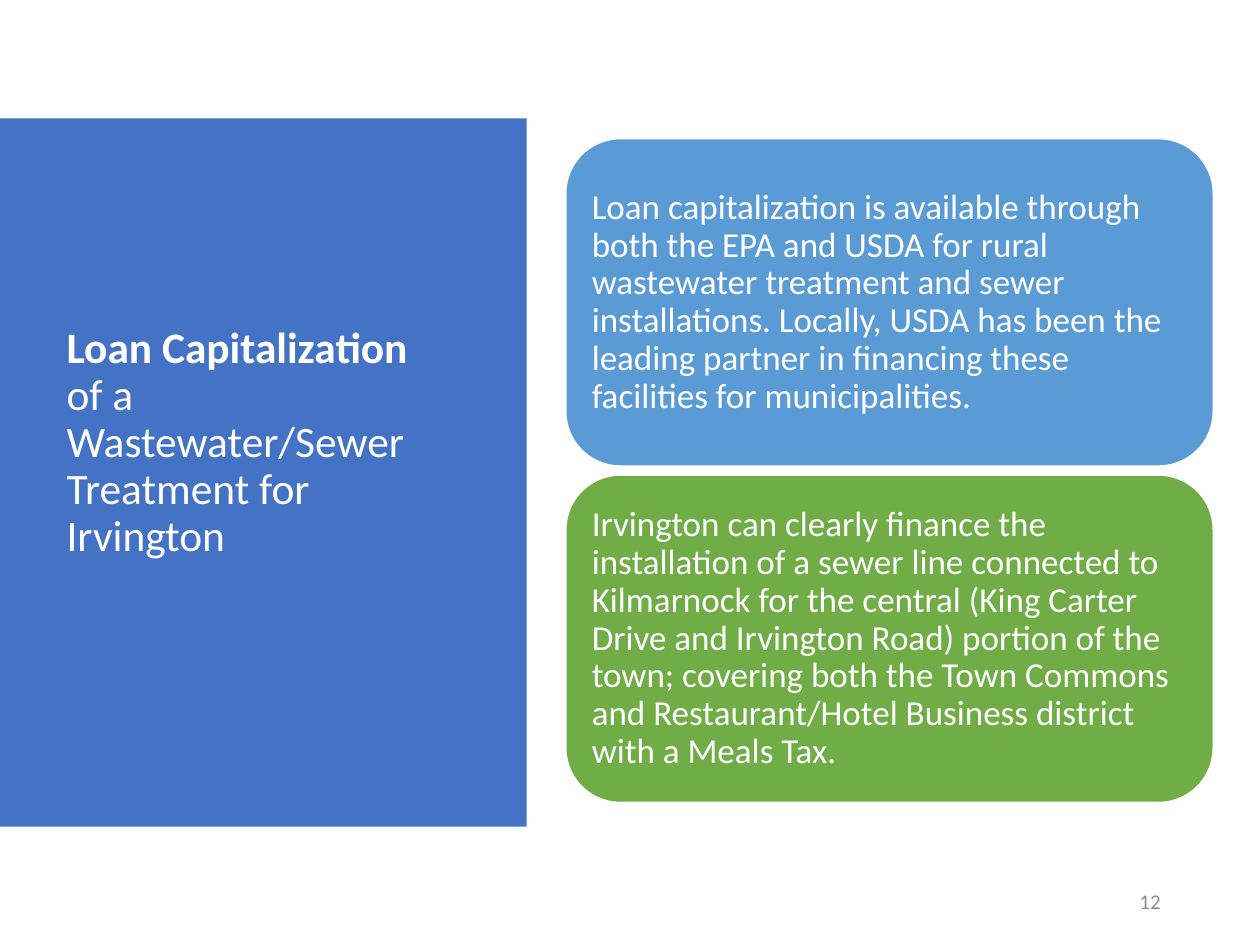
"""Build the loan capitalization slide with a title panel and two cards."""
from pptx import Presentation
from pptx.dml.color import RGBColor
from pptx.enum.shapes import MSO_SHAPE
from pptx.enum.text import MSO_ANCHOR, PP_ALIGN
from pptx.util import Inches, Pt

RECT, ROUNDED = MSO_SHAPE.RECTANGLE, MSO_SHAPE.ROUNDED_RECTANGLE
MIDDLE = MSO_ANCHOR.MIDDLE
LEFT, RIGHT = PP_ALIGN.LEFT, PP_ALIGN.RIGHT
WHITE = RGBColor(0xFF, 0xFF, 0xFF)
BLUE = RGBColor(0x44, 0x72, 0xC4)
LIGHT_BLUE = RGBColor(0x5B, 0x9B, 0xD5)
GREEN = RGBColor(0x70, 0xAD, 0x47)
GRAY = RGBColor(0x8C, 0x8C, 0x8C)

CARDS = [
    (LIGHT_BLUE, "Loan capitalization is available through both the EPA and USDA for rural "
     "wastewater treatment and sewer installations. Locally, USDA has been the leading "
     "partner in financing these facilities for municipalities."),
    (GREEN, "Irvington can clearly finance the installation of a sewer line connected to "
     "Kilmarnock for the central (King Carter Drive and Irvington Road) portion of the town; "
     "covering both the Town Commons and Restaurant/Hotel Business district with a Meals Tax."),
]


def add_block(shapes, kind, box, fill):
    sp = shapes.add_shape(kind, *map(Inches, box))
    sp.shadow.inherit = False
    sp.fill.solid()
    sp.fill.fore_color.rgb = fill
    sp.line.fill.background()
    return sp


def write_text(sp, runs, size, color, align=LEFT, spacing=0.9, inset=None):
    tf = sp.text_frame
    tf.word_wrap = True
    tf.vertical_anchor = MIDDLE
    if inset is not None:
        for side in ("left", "top", "right", "bottom"):
            setattr(tf, f"margin_{side}", Inches(inset))
    p = tf.paragraphs[0]
    p.alignment = align
    p.line_spacing = spacing
    for text, bold in runs:
        r = p.add_run()
        r.text = text
        for name, value in {"name": "Calibri", "size": Pt(size), "bold": bold}.items():
            setattr(r.font, name, value)
        r.font.color.rgb = color


prs = Presentation()
prs.slide_width, prs.slide_height = Inches(10), Inches(7.5)
s = prs.slides.add_slide(prs.slide_layouts[6])

add_block(s.shapes, RECT, (0, 0.94, 4.18, 5.62), BLUE)
title = s.shapes.add_textbox(Inches(0.43), Inches(1.45), Inches(3.12), Inches(4.14))
write_text(title, [("Loan Capitalization ", True),
                   ("of a Wastewater/Sewer Treatment for Irvington", False)], 24.8, WHITE)

for i, (fill, text) in enumerate(CARDS):
    card = add_block(s.shapes, ROUNDED, (4.49, 1.1 + i * 2.67, 5.14, 2.6), fill)
    card.line.color.rgb = WHITE
    card.line.width = Pt(1)
    write_text(card, [(text, False)], 20, WHITE, inset=0.08)

number = s.shapes.add_textbox(Inches(7.06), Inches(6.95), Inches(2.25), Inches(0.4))
write_text(number, [("12", False)], 12, GRAY, align=RIGHT, spacing=1.0)

prs.save("out.pptx")
